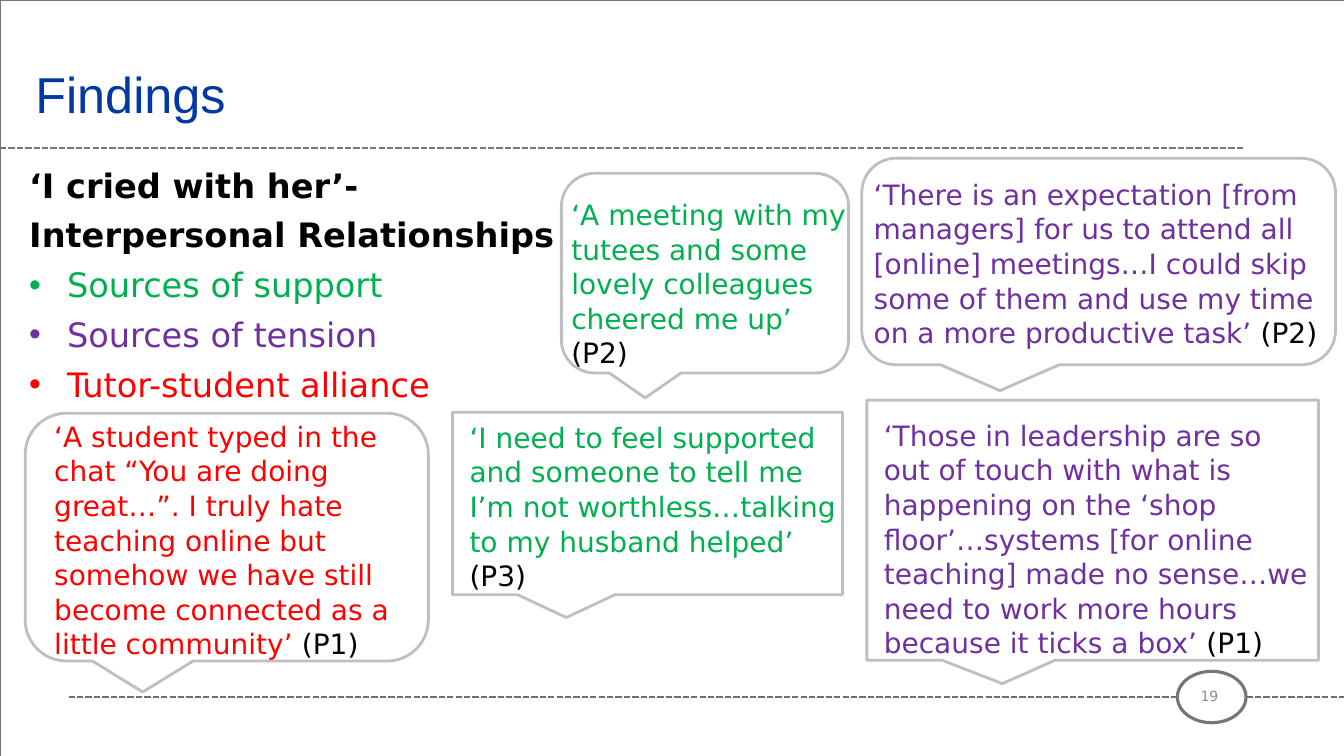
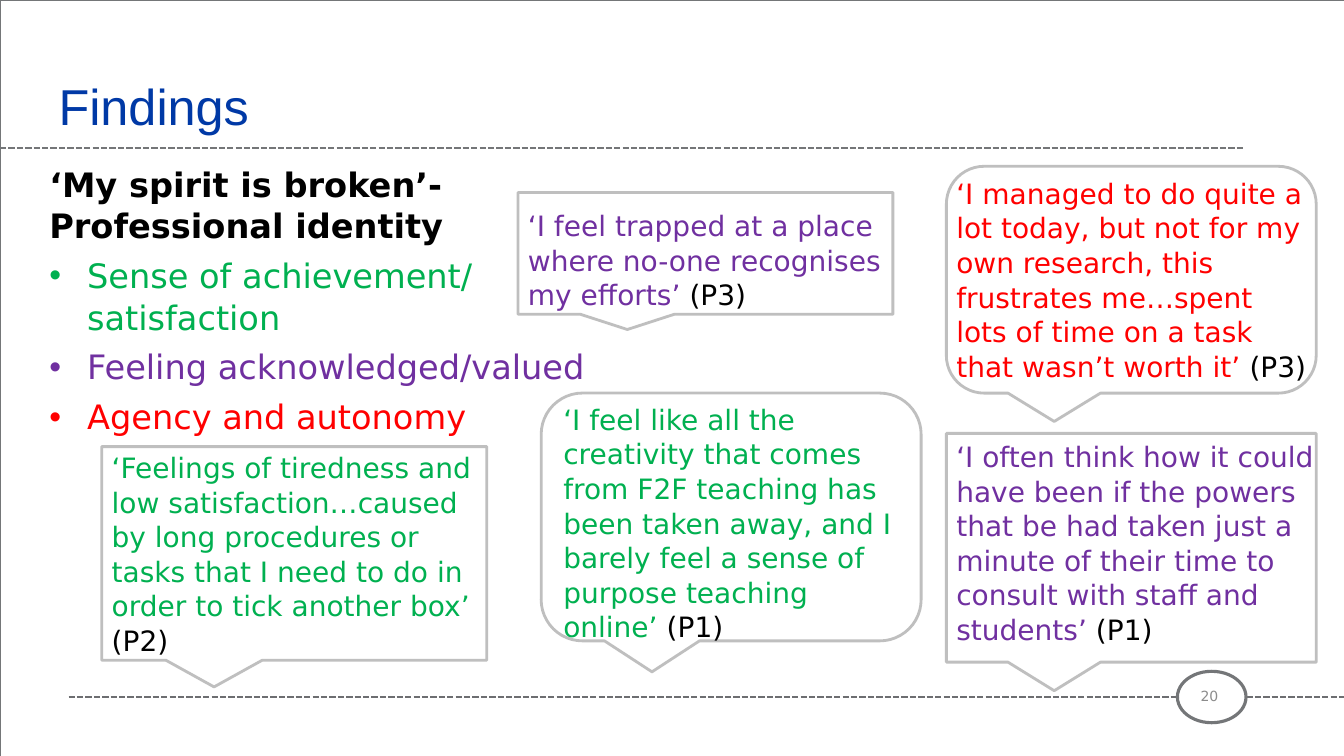
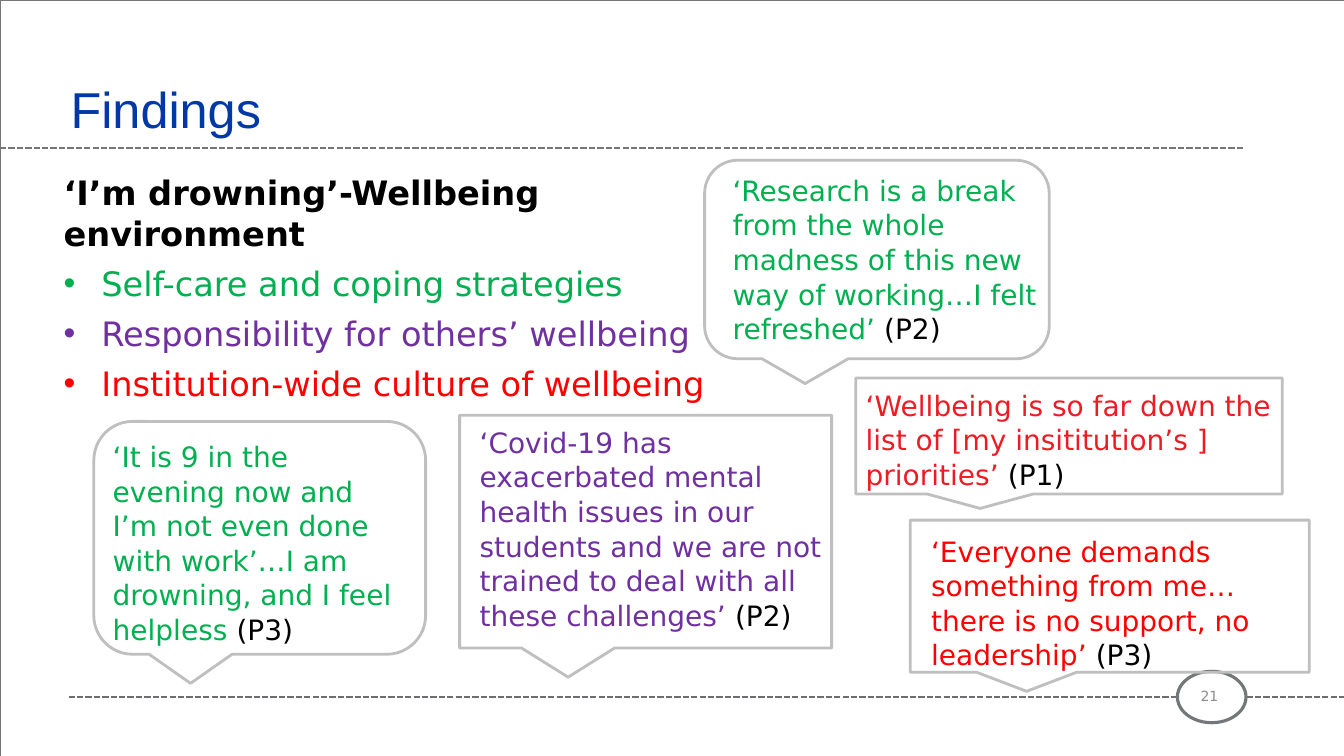
"""Builds three findings slides with quotes in callouts and a shared dashed frame."""
from lxml.etree import SubElement
from pptx import Presentation
from pptx.dml.color import RGBColor
from pptx.enum.dml import MSO_LINE
from pptx.enum.shapes import MSO_CONNECTOR, MSO_SHAPE as SHAPE
from pptx.enum.text import MSO_ANCHOR as ANCHOR, MSO_AUTO_SIZE as FIT, PP_ALIGN as ALIGN
from pptx.oxml.ns import qn
from pptx.util import Pt

COLORS = {
    "title": "0039A6", "black": "000000", "green": "00B050", "purple": "7030A0",
    "red": "FF0000", "crimson": "ED1C24", "callout": "BFBFBF", "frame": "747678",
    "dash": "6D6E71", "number": "8C8C8C", "white": "FFFFFF",
}
TOPIC_COLORS = ["green", "purple", "red"]
ROUND, RECT = SHAPE.ROUNDED_RECTANGULAR_CALLOUT, SHAPE.RECTANGULAR_CALLOUT
QUOTE_LINE, QUOTE_PADDING = 24.2, 7
FIRST_NUMBER = 19

FINDINGS = [
    {
        "title": (18, 33),
        "body": (13.7, 113, 454.3, 177),
        "headings": ["‘I cried with her’-", "Interpersonal Relationships"],
        "topics": ["Sources of support", "Sources of tension", "Tutor-student alliance"],
        "quotes": [
            (ROUND, (401, 123.8, 205.2, 142.6), (401, 136.8, 214.6), 5, "green", "P2",
             "‘A meeting with my tutees and some lovely colleagues cheered me up’"),
            (RECT, (323.3, 294.5, 278.6, 130.3), (328.3, 296, 278.6), 5, "green", "P3",
             "‘I need to feel supported and someone to tell me I’m not worthless…talking "
             "to my husband helped’"),
            (RECT, (619.2, 285.8, 322.6, 185.8), (624.2, 294.5, 322.6), 7, "purple", "P1",
             "‘Those in leadership are so out of touch with what is happening on the ‘shop "
             "floor’…systems [for online teaching] made no sense…we need to work more hours "
             "because it ticks a box’"),
            (ROUND, (615.6, 113, 338.4, 147.6), (617, 122.4, 338.4), 5, "purple", "P2",
             "‘There is an expectation [from managers] for us to attend all [online] "
             "meetings…I could skip some of them and use my time on a more productive task’"),
            (ROUND, (18, 295.2, 288, 177), (31.7, 295.2, 280.8), 7, "red", "P1",
             "‘A student typed in the chat “You are doing great…”. I truly hate teaching "
             "online but somehow we have still become connected as a little community’"),
        ],
    },
    {
        "title": (34.6, 41.8),
        "body": (28, 112.3, 454.3, 200),
        "headings": ["‘My spirit is broken’-Professional identity"],
        "topics": ["Sense of achievement/ satisfaction", "Feeling acknowledged/valued",
                   "Agency and autonomy"],
        "quotes": [
            (RECT, (370, 137.5, 267.8, 87), (370, 144.7, 298), 3, "purple", "P3",
             "‘I feel trapped at a place where no-one recognises my efforts’"),
            (ROUND, (386.6, 280.8, 271.4, 177), (395.3, 283, 255), 7, "green", "P1",
             "‘I feel like all the creativity that comes from F2F teaching has been taken "
             "away, and I barely feel a sense of purpose teaching online’"),
            (RECT, (72.7, 319, 275, 152.6), (72.7, 317.5, 271.4), 6, "green", "P2",
             "‘Feelings of tiredness and low satisfaction…caused by long procedures or tasks "
             "that I need to do in order to tick another box’"),
            (RECT, (676, 309.6, 264.2, 163.4), (676, 309.6, 271.4), 6, "purple", "P1",
             "‘I often think how it could have been if the powers that be had taken just a "
             "minute of their time to consult with staff and students’"),
            (ROUND, (676, 118.8, 264.2, 162), (676, 121.7, 264.2), 6, "red", "P3",
             "‘I managed to do quite a lot today, but not for my own research, this "
             "frustrates me…spent lots of time on a task that wasn’t worth it’"),
        ],
    },
    {
        "title": (43.2, 44),
        "body": (38.2, 118, 501, 170.6),
        "headings": ["‘I’m drowning’-Wellbeing environment"],
        "topics": ["Self-care and coping strategies", "Responsibility for others’ wellbeing",
                   "Institution-wide culture of wellbeing"],
        "quotes": [
            (ROUND, (503.3, 114.5, 246.2, 141.8), (516.2, 119.5, 246.2), 5, "green", "P2",
             "‘Research is a break from the whole madness of this new way of working…I felt "
             "refreshed’"),
            (ROUND, (67, 301, 237, 166.3), (73.4, 309.6, 219.6), 6, "green", "P3",
             "‘It is 9 in the evening now and I’m not even done with work’…I am drowning, "
             "and I feel helpless"),
            (RECT, (328.3, 296.6, 265.7, 166.3), (335.5, 299.5, 265.7), 6, "purple", "P2",
             "‘Covid-19 has exacerbated mental health issues in our students and we are not "
             "trained to deal with all these challenges’"),
            (RECT, (611.3, 270, 304.6, 82.8), (611.3, 273, 304.6), 3, "crimson", "P1",
             "‘Wellbeing is so far down the list of [my insititution’s ] priorities’"),
            (RECT, (650.2, 371.5, 285, 108.7), (658, 377.3, 283), 4, "red", "P3",
             "‘Everyone demands something from me…there is no support, no leadership’"),
        ],
    },
]


def write(paragraph, text, color="black", size=20, font="DejaVu Sans", bold=False,
          align=ALIGN.LEFT, after=0, spacing=1.0):
    """Adds a formatted run to the paragraph."""
    paragraph.alignment = align
    paragraph.space_before, paragraph.space_after = Pt(0), Pt(after)
    paragraph.line_spacing = spacing
    run = paragraph.add_run()
    run.text = text
    run.font.size, run.font.name, run.font.bold = Pt(size), font, bold
    run.font.color.rgb = RGBColor.from_string(COLORS[color])


def outline(shapes, preset, box, color, width, fill=None):
    """Adds a preset shape with a plain outline and an optional fill."""
    shape = shapes.add_shape(preset, *map(Pt, box))
    shape.shadow.inherit = False
    if fill:
        shape.fill.solid()
        shape.fill.fore_color.rgb = RGBColor.from_string(COLORS[fill])
    else:
        shape.fill.background()
    shape.line.color.rgb = RGBColor.from_string(COLORS[color])
    shape.line.width = Pt(width)
    return shape


deck = Presentation()
deck.slide_width, deck.slide_height = Pt(960), Pt(540)
layout = deck.slide_layouts[1]
slides = [deck.slides.add_slide(layout) for _ in FINDINGS]

shapes = slides[0].shapes
frame = []
for left, right, y, color in [(49, 960, 498, "dash"), (0, 888.5, 105.8, "frame")]:
    rule = shapes.add_connector(MSO_CONNECTOR.STRAIGHT, Pt(left), Pt(y), Pt(right), Pt(y))
    rule.line.color.rgb = RGBColor.from_string(COLORS[color])
    rule.line.width = Pt(1.5)
    rule.line.dash_style = MSO_LINE.SQUARE_DOT
    SubElement(rule.element.spPr, qn("a:effectLst"))
    frame.append(rule)
frame.append(outline(shapes, SHAPE.OVAL, (841, 479.5, 49, 36.7), "frame", 2.25, "white"))
frame.append(outline(shapes, SHAPE.RECTANGLE, (0, 0, 960, 540), "frame", 0.5))
for shape_id, part in enumerate(frame, 100):
    part.element.xpath(".//p:cNvPr")[0].set("id", str(shape_id))
    layout.shapes.element.append(part.element)

for number, (slide, finding) in enumerate(zip(slides, FINDINGS), FIRST_NUMBER):
    title, body = slide.placeholders
    for holder, box in [(title, (*finding["title"], 731.5, 67)), (body, finding["body"])]:
        holder.left, holder.top, holder.width, holder.height = map(Pt, box)
        holder.text_frame.auto_size = FIT.NONE
    title.text_frame.vertical_anchor = ANCHOR.MIDDLE
    write(title.text_frame.paragraphs[0], "Findings", color="title", size=36, font="Arial")

    entries = [(heading, "black", True) for heading in finding["headings"]]
    entries += [(topic, color, False) for topic, color in zip(finding["topics"], TOPIC_COLORS)]
    for index, (text, color, bold) in enumerate(entries):
        entry = body.text_frame.add_paragraph() if index else body.text_frame.paragraphs[0]
        write(entry, text, color=color, size=24, bold=bold, after=6, spacing=1.03)
        indent = 0 if bold else Pt(27)
        properties = entry._p.get_or_add_pPr()
        properties.set("marL", str(indent))
        properties.set("indent", str(-indent))
        if bold:
            SubElement(properties, qn("a:buNone"))
        else:
            SubElement(properties, qn("a:buFont")).set("typeface", "Arial")
            SubElement(properties, qn("a:buChar")).set("char", "•")

    for preset, box, (left, top, width), lines, color, speaker, words in finding["quotes"]:
        callout = outline(slide.shapes, preset, box, "callout", 2)
        if lines == 7 and preset == RECT:
            callout.adjustments[0], callout.adjustments[1] = -0.2, 0.59
        height = lines * QUOTE_LINE + QUOTE_PADDING
        quote = slide.shapes.add_textbox(Pt(left), Pt(top), Pt(width), Pt(height)).text_frame
        quote.word_wrap = True
        quote.auto_size = FIT.SHAPE_TO_FIT_TEXT
        write(quote.paragraphs[0], words + " ", color=color, after=6, spacing=1.03)
        write(quote.paragraphs[0], f"({speaker})", after=6, spacing=1.03)

    page = slide.shapes.add_textbox(Pt(843), Pt(481), Pt(41.8), Pt(32.4)).text_frame
    page.word_wrap = True
    page.vertical_anchor = ANCHOR.MIDDLE
    write(page.paragraphs[0], str(number), color="number", size=10, align=ALIGN.CENTER)

deck.save("out.pptx")
